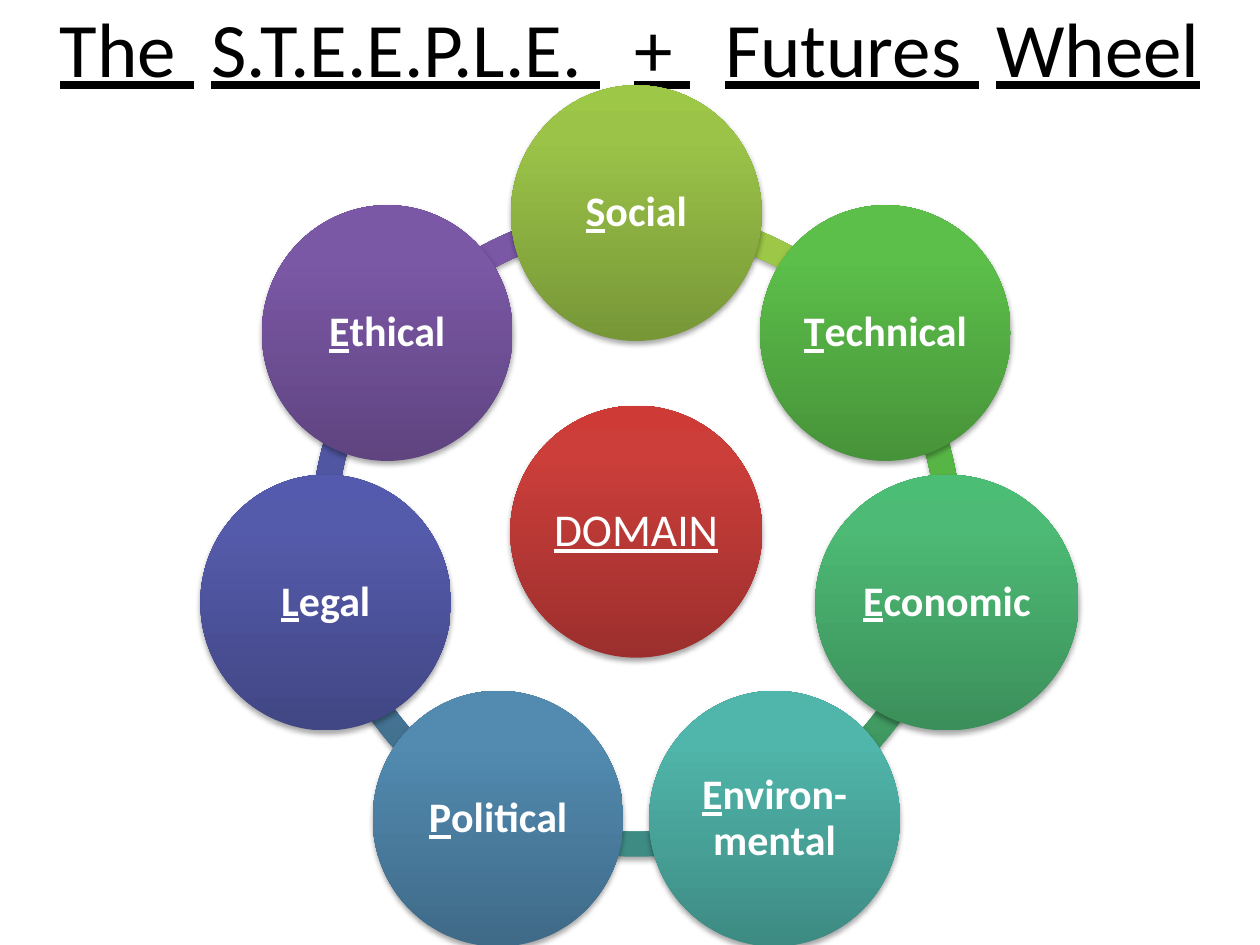
import math

from pptx import Presentation
from pptx import util as u
from pptx.dml import color
from pptx.enum import shapes, text
from pptx.oxml import parse_xml
from pptx.oxml.ns import nsdecls

FONT = "Calibri"
WHITE = "FFFFFF"
DOMAIN = ("9C2F2D", "CB3E3A", "CE3B37")
# Clockwise from the top: label, then the bottom, upper and top shades
FACTORS = [
    ("Social", ("779737", "9BC348", "9DC746")),
    ("Technical", ("479339", "5CBF4A", "5BC249")),
    ("Economic", ("3B8F5A", "4DBA75", "4BBD75")),
    ("Environ-mental", ("3D8B83", "50B5AA", "4EB8AC")),
    ("Political", ("3F6A88", "528AB0", "518BB3")),
    ("Legal", ("414684", "555BAB", "545AAE")),
    ("Ethical", ("5F4480", "7B58A6", "7C57A8")),
]
# Title words, each with the width of the gap after it in spaces
TITLE = [("The", 2), ("S.T.E.E.P.L.E.", 3), ("+", 3), ("Futures", 2), ("Wheel", 0)]
TITLE_SIZE = 44
SPACE_WIDTH = 0.226  # share of the type size


def rgb(value):
    return color.RGBColor.from_string(value)


def style_run(run, size, shade, bold=False, underline=True):
    font = run.font
    font.name, font.size = FONT, u.Pt(size)
    font.bold, font.underline = bold, underline
    font.color.rgb = rgb(shade)


def add_glossy(page, kind, center, width, height, shades):
    """Add a shape about its centre with a vertical gradient and soft shadow."""
    x, y = center
    shape = page.shapes.add_shape(
        kind, *(u.Inches(v) for v in (x - width / 2, y - height / 2, width, height)))
    stops = "".join(
        f'<a:gs pos="{share * 1000}"><a:srgbClr val="{shade}"/></a:gs>'
        for share, shade in zip((0, 80, 100), shades))
    properties = shape._element.spPr
    properties.append(parse_xml(
        f'<a:gradFill {nsdecls("a")} rotWithShape="1"><a:gsLst>{stops}</a:gsLst>'
        '<a:lin ang="16200000" scaled="0"/></a:gradFill>'))
    shape.line.fill.background()
    properties.append(parse_xml(
        f'<a:effectLst {nsdecls("a")}><a:outerShdw blurRad="40000" dist="23000" '
        'dir="5400000" rotWithShape="0"><a:srgbClr val="000000">'
        '<a:alpha val="35000"/></a:srgbClr></a:outerShdw></a:effectLst>'))
    return shape


def add_disc(page, center, width, height, shades, parts, size, bold, inset):
    """Add a labelled disc; only the first part of its label is underlined."""
    disc = add_glossy(page, shapes.MSO_SHAPE.OVAL, center, width, height, shades)
    frame = disc.text_frame
    frame.word_wrap = True
    frame.vertical_anchor = text.MSO_ANCHOR.MIDDLE
    frame.margin_left = frame.margin_right = u.Inches(inset)
    frame.margin_top = frame.margin_bottom = u.Inches(inset)
    para = frame.paragraphs[0]
    para.alignment = text.PP_ALIGN.CENTER
    para.line_spacing = 0.9
    for index, part in enumerate(parts):
        span = para.add_run()
        span.text = part
        style_run(span, size, WHITE, bold, underline=index == 0)


def add_title(page, left, top, width, height):
    box = page.shapes.add_textbox(*(u.Inches(v) for v in (left, top, width, height)))
    frame = box.text_frame
    frame.word_wrap = True
    frame.vertical_anchor = text.MSO_ANCHOR.MIDDLE
    para = frame.paragraphs[0]
    para.alignment = text.PP_ALIGN.CENTER
    for word, gap in TITLE:
        span = para.add_run()
        span.text = word
        style_run(span, TITLE_SIZE, "000000")
        if gap:
            # One space, widened by letter spacing
            span = para.add_run()
            span.text = " "
            style_run(span, TITLE_SIZE, "000000")
            extra = (gap - 1) * SPACE_WIDTH * TITLE_SIZE
            span.font._element.set("spc", str(round(extra * 100)))


def add_wheel(page, left, top, side):
    """Fill a square box, the outer size of the ring, with the wheel."""
    x, y = left + side / 2, top + side / 2
    radius = 0.49 * side
    step = 360 / len(FACTORS)
    angles = [k * step - 90 for k in range(len(FACTORS))]

    # Ring, one arc from each factor to the next
    for angle, (_, shades) in reversed(list(zip(angles, FACTORS))):
        arc = add_glossy(page, shapes.MSO_SHAPE.BLOCK_ARC, (x, y), side, side, shades)
        # Angles are held in 60000ths of a degree, adjustments in 100000ths
        arc.adjustments[0] = angle % 360 * 0.6
        arc.adjustments[1] = (angle + step) % 360 * 0.6
        arc.adjustments[2] = 0.039

    # Hub
    add_disc(page, (x, y), 2, 2, DOMAIN, ["DOMAIN"], 26, False, 0.04)

    # Factors
    for angle, (label, shades) in zip(angles, FACTORS):
        turn = math.radians(angle)
        center = (x + radius * math.cos(turn), y + radius * math.sin(turn))
        width = 2.09 if label == "Economic" else 1.99
        add_disc(page, center, width, 2.03, shades,
                 [label[0], label[1:]], 24, True, 0.03)


def main():
    deck = Presentation()
    deck.slide_width, deck.slide_height = u.Inches(10), u.Inches(7.5)
    page = deck.slides.add_slide(deck.slide_layouts[6])
    add_title(page, 0, 0.13, 10, 0.48)
    add_wheel(page, 2.47, 1.64, 5.16)
    deck.save("out.pptx")


if __name__ == "__main__":
    main()
